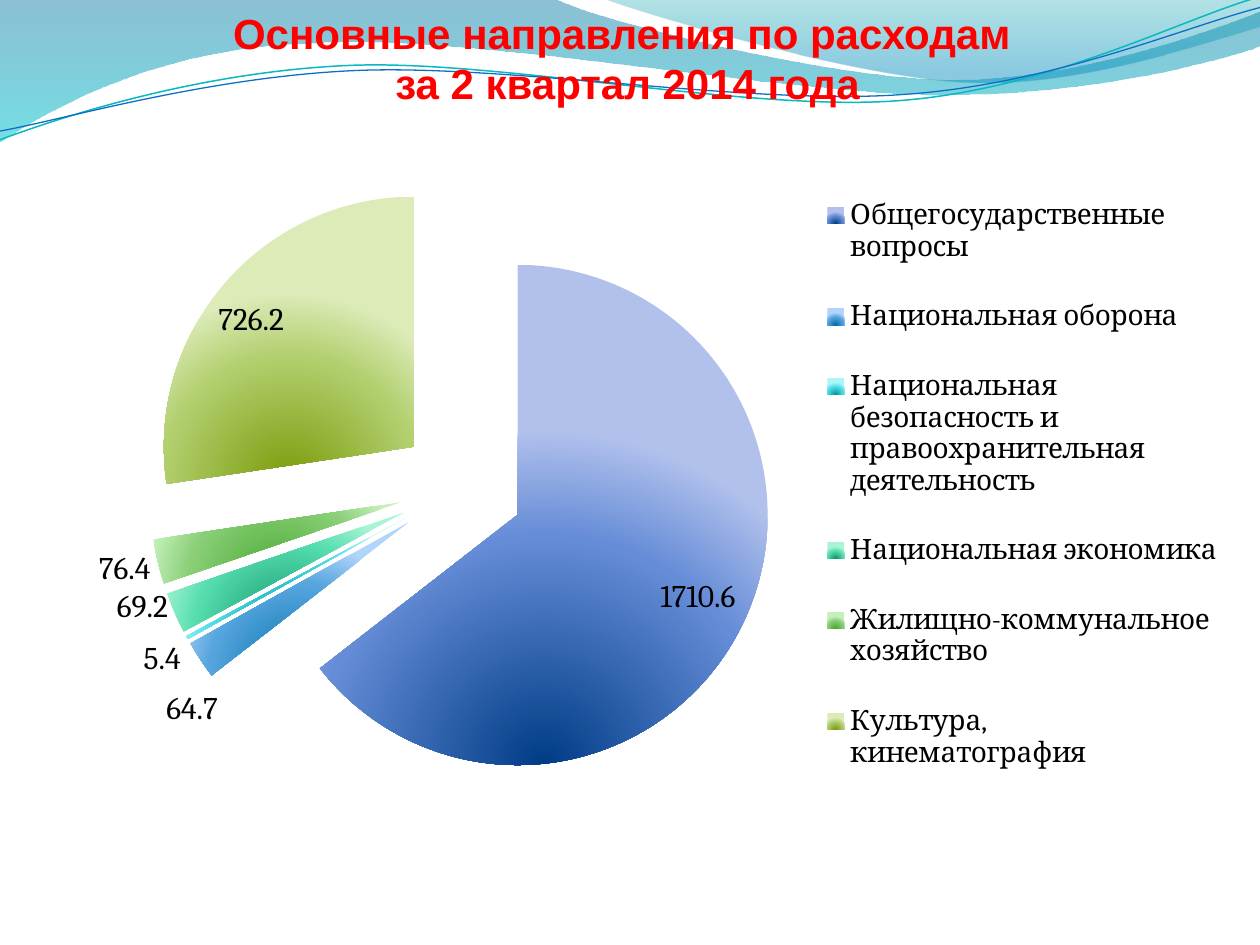
from dataclasses import dataclass

from lxml import etree
from pptx import Presentation
from pptx.chart.data import CategoryChartData
from pptx.dml.color import RGBColor
from pptx.enum.chart import XL_CHART_TYPE, XL_LABEL_POSITION, XL_LEGEND_POSITION
from pptx.enum.text import MSO_AUTO_SIZE, PP_ALIGN
from pptx.oxml.ns import qn
from pptx.util import Inches, Pt

PIE = XL_CHART_TYPE.PIE
INSIDE = XL_LABEL_POSITION.INSIDE_END
OUTSIDE = XL_LABEL_POSITION.OUTSIDE_END
LEGEND_RIGHT = XL_LEGEND_POSITION.RIGHT
FIT_SHAPE = MSO_AUTO_SIZE.SHAPE_TO_FIT_TEXT
CENTER = PP_ALIGN.CENTER

RED = RGBColor(0xFF, 0x00, 0x00)
BLACK = RGBColor(0x00, 0x00, 0x00)
TEAL = RGBColor(0x0A, 0xB8, 0xBF)
BLUE = RGBColor(0x0F, 0x6F, 0xC6)
DEEP_BLUE = RGBColor(0x00, 0x74, 0xA1)
CYAN = RGBColor(0x00, 0xC6, 0xCF)
SEA_GREEN = RGBColor(0x00, 0xA1, 0xA9)
SKY = RGBColor(0x00, 0x8B, 0xBF)

TITLE_LINES = "Основные направления по расходам\n за 2 квартал 2014 года"
EXPLOSION = 25
LARGE_SLICE = 500
SLICE_STOPS = (0, 68, 100)

Point = tuple[float, float]
Segment = tuple[float, ...]


@dataclass
class Stop:
    position: int
    color: RGBColor
    opacity: int = 100


@dataclass
class Ribbon:
    start: Point
    segments: list[Segment]
    stops: list[Stop]


@dataclass
class Wave:
    start: Point
    segments: list[Segment]
    color: RGBColor
    width: float


@dataclass
class Expense:
    name: str
    value: float
    shades: tuple[str, str, str]
    label_shift: Point = (0, 0)


RIBBONS = [
    Ribbon((0, 0), [
        (4.4, -0.01),
        (4.76, 0.17, 6.64, 0.63, 7.58, 0.63),
        (8.53, 0.63, 9.58, 0.26, 10, 0.09),
        (10.01, 0.36),
        (9.83, 0.44, 8.7, 0.76, 7.46, 0.75),
        (6.22, 0.75, 3.82, 0.28, 2.57, 0.34),
        (1.29, 0.36, 0.46, 0.83, -0.01, 1.13),
        (0, 0),
    ], [Stop(0, DEEP_BLUE, 45), Stop(100, CYAN, 55)]),
    Ribbon((4.79, -0.01), [
        (5.09, 0.11, 6.82, 0.62, 7.69, 0.65),
        (8.56, 0.69, 9.61, 0.32, 10, 0.21),
        (10, 0),
        (4.79, -0.01),
    ], [Stop(0, SEA_GREEN, 30), Stop(80, SKY, 45)]),
]

WAVES = [
    Wave((0, 1.11), [
        (0.48, 0.93, 1.58, 0.57, 2.77, 0.52),
        (3.95, 0.47, 5.93, 0.89, 7.13, 0.8),
        (8.33, 0.71, 9.38, 0.15, 9.98, -0.02),
    ], TEAL, 0.85),
    Wave((0, 1.04), [
        (0.47, 0.96, 1.64, 0.61, 2.83, 0.56),
        (4.03, 0.51, 5.97, 0.84, 7.17, 0.75),
        (8.36, 0.67, 9.41, 0.21, 10, 0.06),
    ], BLUE, 0.75),
]

EXPENSES = [
    Expense("Общегосударственные вопросы", 1710.6, ("003C86", "658CD7", "B1C1EC"), (0, -0.01)),
    Expense("Национальная оборона", 64.7, ("0070A8", "56A5DE", "B0D5FA"), (0.02, 0.04)),
    Expense("Национальная безопасность и правоохранительная деятельность", 5.4,
            ("0096A0", "50DDE5", "AAF6F8")),
    Expense("Национальная экономика", 69.2, ("10906A", "55DDAE", "A8F5D5"), (0, -0.04)),
    Expense("Жилищно-коммунальное хозяйство", 76.4, ("48A82E", "8ACF78", "C4F0BA"), (0, -0.02)),
    Expense("Культура, кинематография", 726.2, ("7A9B0A", "B3D070", "DCEBB8"), (-0.01, 0.02)),
]


def add_outline(slide, start: Point, segments: list[Segment], closed: bool):
    builder = slide.shapes.build_freeform(Inches(start[0]), Inches(start[1]), scale=1.0)
    for segment in segments:
        points = [(Inches(x), Inches(y)) for x, y in zip(segment[::2], segment[1::2])]
        builder.add_line_segments(points, close=closed and segment is segments[-1])
    shape = builder.convert_to_shape()
    shape.shadow.inherit = False
    shape.fill.background()
    steps = iter(shape._element.findall(".//" + qn("a:lnTo")))
    for segment in segments:
        first = next(steps)
        if len(segment) == 6:
            first.tag = qn("a:cubicBezTo")
            for step in (next(steps), next(steps)):
                first.append(step[0])
                step.getparent().remove(step)
    return shape


def set_gradient(element, stops: list[Stop], radial: bool) -> None:
    gradient = etree.Element(qn("a:gradFill"), rotWithShape="1")
    stop_list = etree.SubElement(gradient, qn("a:gsLst"))
    for stop in stops:
        entry = etree.SubElement(stop_list, qn("a:gs"), pos=str(stop.position * 1000))
        color = etree.SubElement(entry, qn("a:srgbClr"), val=str(stop.color))
        if stop.opacity < 100:
            etree.SubElement(color, qn("a:alpha"), val=str(stop.opacity * 1000))
    if radial:
        circle = etree.SubElement(gradient, qn("a:path"), path="circle")
        etree.SubElement(circle, qn("a:fillToRect"), l="50000", t="100000", r="50000", b="0")
    else:
        etree.SubElement(gradient, qn("a:lin"), ang="5400000", scaled="1")
    empty_fill = element.find(".//" + qn("a:noFill"))
    empty_fill.getparent().replace(empty_fill, gradient)


def add_ribbon(slide, ribbon: Ribbon) -> None:
    shape = add_outline(slide, ribbon.start, ribbon.segments, True)
    set_gradient(shape._element, ribbon.stops, False)
    shape.line.fill.background()


def add_wave(slide, wave: Wave) -> None:
    shape = add_outline(slide, wave.start, wave.segments, False)
    shape.line.color.rgb = wave.color
    shape.line.width = Pt(wave.width)


def add_title(slide) -> None:
    title = slide.shapes.add_textbox(Inches(0.17), Inches(0.01), Inches(9.53), Inches(0.91))
    text_frame = title.text_frame
    text_frame.word_wrap = True
    text_frame.auto_size = FIT_SHAPE
    text_frame.text = TITLE_LINES
    for paragraph in text_frame.paragraphs:
        paragraph.alignment = CENTER
        font = paragraph.runs[0].font
        font.name, font.size, font.bold = "Arial", Pt(24), True
        font.color.rgb = RED


def set_layout(parent, index: int, modes: dict[str, str], **box: float) -> None:
    for existing in parent.findall(qn("c:layout")):
        parent.remove(existing)
    layout = etree.Element(qn("c:layout"))
    manual = etree.SubElement(layout, qn("c:manualLayout"))
    for name, setting in (modes | box).items():
        etree.SubElement(manual, qn(f"c:{name}"), val=str(setting))
    parent.insert(index, layout)


def add_expense_chart(slide) -> None:
    data = CategoryChartData()
    data.categories = [expense.name for expense in EXPENSES]
    data.add_series("Series 1", [expense.value for expense in EXPENSES])
    chart = slide.shapes.add_chart(
        PIE, Inches(0.43), Inches(1.23), Inches(9.37), Inches(5.28), data).chart
    chart.has_title = False
    chart.font.name, chart.font.size = "Cambria", Pt(18)
    chart.font.color.rgb = BLACK
    chart.has_legend = True
    legend = chart.legend
    legend.position = LEGEND_RIGHT
    legend.include_in_layout = False
    legend.font.name, legend.font.size = "Cambria", Pt(16)
    legend.font.color.rgb = BLACK
    plot = chart.plots[0]
    plot.vary_by_categories = True
    series = plot.series[0]
    for index, expense in enumerate(EXPENSES):
        point = series.points[index]
        point.format.fill.background()
        slice_element = series._element.findall(qn("c:dPt"))[index]
        stops = [Stop(position, RGBColor.from_string(shade))
                 for position, shade in zip(SLICE_STOPS, expense.shades)]
        set_gradient(slice_element, stops, True)
        point.data_label.position = INSIDE if expense.value > LARGE_SLICE else OUTSIDE
        label = series._element.findall(".//" + qn("c:dLbl"))[index]
        shift_x, shift_y = expense.label_shift
        set_layout(label, 1, {}, x=shift_x, y=shift_y)
    for leader_lines in series._element.iter(qn("c:showLeaderLines")):
        leader_lines.set("val", "0")
    explosion = etree.Element(qn("c:explosion"), val=str(EXPLOSION))
    series._element.find(qn("c:dPt")).addprevious(explosion)
    edges = {"xMode": "edge", "yMode": "edge"}
    set_layout(chart._chartSpace.chart.plotArea, 0, {"layoutTarget": "inner"} | edges,
               x=0.07, y=0.03, w=0.55, h=0.94)
    set_layout(legend._element, 1, edges, x=0.65, y=0.01, w=0.34, h=0.97)


def main() -> None:
    presentation = Presentation()
    presentation.slide_width, presentation.slide_height = Inches(10), Inches(7.5)
    slide = presentation.slides.add_slide(presentation.slide_layouts[6])
    for ribbon in RIBBONS:
        add_ribbon(slide, ribbon)
    for wave in WAVES:
        add_wave(slide, wave)
    add_title(slide)
    add_expense_chart(slide)
    presentation.save("out.pptx")


if __name__ == "__main__":
    main()
